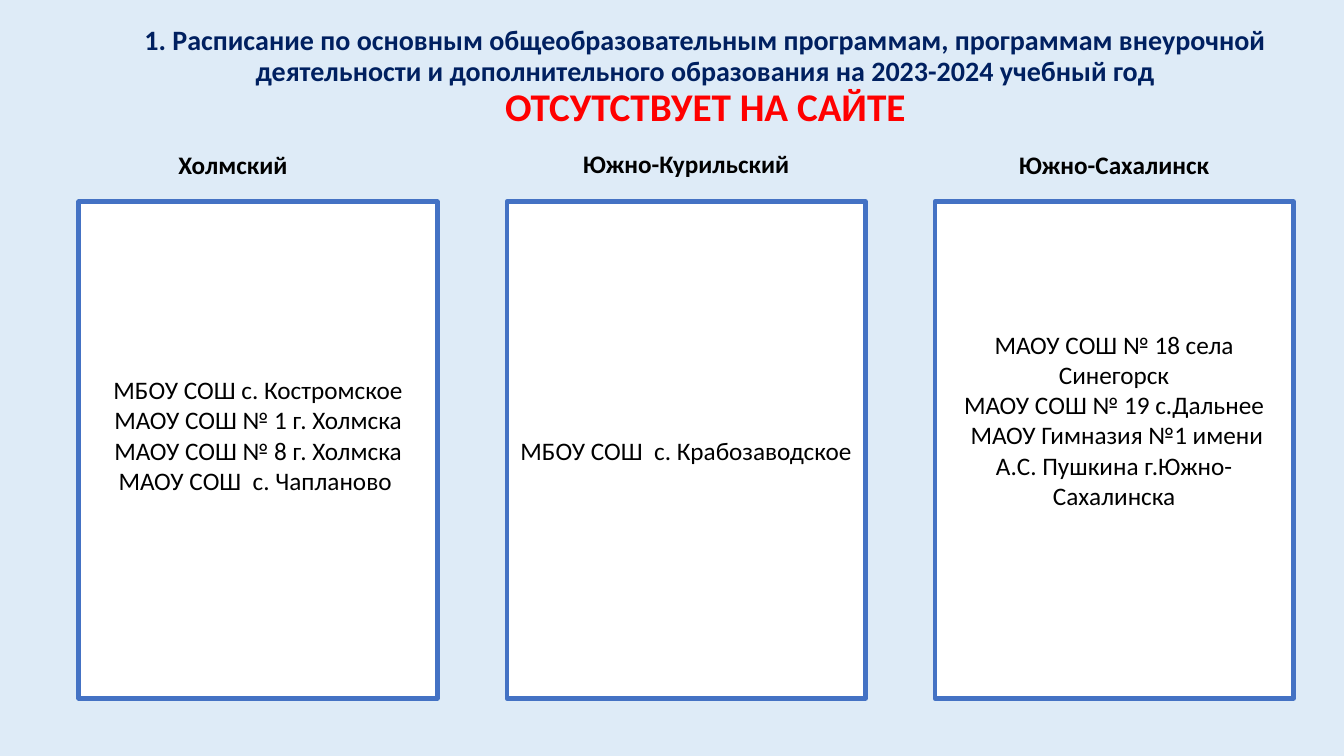
from pptx import Presentation
from pptx.dml.color import RGBColor
from pptx.enum.shapes import MSO_SHAPE as SHAPE
from pptx.enum.text import MSO_ANCHOR as ANCHOR, MSO_AUTO_SIZE as AUTO, PP_ALIGN as ALIGN
from pptx.util import Inches, Pt

LEFT, PITCH, CARD_W = 0.78, 4.245, 3.56
CARD_TOP, CARD_H = 2, 4.93
LINE_H = 0.3
BODY = {"name": "Calibri", "size": Pt(18), "bold": False}
HEADING = {**BODY, "bold": True}
TITLE = [
    ("1. Расписание по основным общеобразовательным программам, программам внеурочной "
     "деятельности и дополнительного образования на 2023-2024 учебный год",
     {**HEADING, "size": Pt(20)}, "002060"),
    ("ОТСУТСТВУЕТ НА САЙТЕ", {**HEADING, "size": Pt(28)}, "FF0000"),
]
# Each district: heading, heading width, heading shift, heading top, schools, free lines below
DISTRICTS = [
    ("Холмский", 1.29, -0.25, 1.43,
     ["МБОУ СОШ с. Костромское", "МАОУ СОШ № 1 г. Холмска",
      "МАОУ СОШ № 8 г. Холмска", "МАОУ СОШ  с. Чапланово "], 1),
    ("Южно-Курильский", 2.27, 0, 1.42, ["МБОУ СОШ  с. Крабозаводское"], 0),
    ("Южно-Сахалинск", 2.11, 0, 1.43,
     ["МАОУ СОШ № 18 села Синегорск", "МАОУ СОШ № 19 с.Дальнее",
      " МАОУ Гимназия №1 имени А.С. Пушкина г.Южно-Сахалинска"], 2),
]


def paint(color_format, value):
    """Set a colour from a hex string."""
    color_format.rgb = RGBColor.from_string(value)


def write(tf, lines, spacing=None):
    """Write centred paragraphs from (text, font format, colour) tuples."""
    for i, (text, fmt, color) in enumerate(lines):
        p = tf.add_paragraph() if i else tf.paragraphs[0]
        p.alignment, p.line_spacing = ALIGN.CENTER, spacing
        r = p.add_run()
        r.text = text
        for key, value in fmt.items():
            setattr(r.font, key, value)
        paint(r.font.color, color)


def add_title(s):
    """Move and fill the title placeholder."""
    sp = s.shapes.title
    box = {"left": 0.92, "top": 0.1, "width": 12.15, "height": 1.35}
    for key, value in box.items():
        setattr(sp, key, Inches(value))
    tf = sp.text_frame
    tf.word_wrap, tf.auto_size, tf.vertical_anchor = True, AUTO.NONE, ANCHOR.MIDDLE
    write(tf, TITLE, 0.9)


def add_heading(s, text, center, top, width):
    """Add a district name centred on its column."""
    sp = s.shapes.add_textbox(Inches(center - width / 2), Inches(top), Inches(width), Inches(0.4))
    tf = sp.text_frame
    tf.word_wrap, tf.auto_size = False, AUTO.SHAPE_TO_FIT_TEXT
    write(tf, [(text, HEADING, "000000")])


def add_card(s, left, schools, free_lines):
    """Add a framed list of schools, raised by the free lines below it."""
    sp = s.shapes.add_shape(SHAPE.RECTANGLE, Inches(left), Inches(CARD_TOP),
                            Inches(CARD_W), Inches(CARD_H))
    sp.shadow.inherit = False
    sp.fill.solid()
    paint(sp.fill.fore_color, "FFFFFF")
    paint(sp.line.color, "4472C4")
    sp.line.width = Pt(3)
    tf = sp.text_frame
    tf.word_wrap, tf.vertical_anchor = True, ANCHOR.MIDDLE
    tf.margin_bottom = Inches(0.05 + free_lines * LINE_H)
    write(tf, [(school, BODY, "000000") for school in schools])


def main():
    """Build the slide and save it."""
    prs = Presentation()
    prs.slide_width, prs.slide_height = Inches(13.33), Inches(7.5)
    s = prs.slides.add_slide(prs.slide_layouts[5])
    s.background.fill.solid()
    paint(s.background.fill.fore_color, "DEEBF7")
    add_title(s)
    for col, (name, width, shift, top, schools, free_lines) in enumerate(DISTRICTS):
        left = LEFT + col * PITCH
        add_card(s, left, schools, free_lines)
        add_heading(s, name, left + CARD_W / 2 + shift, top, width)
    prs.save("out.pptx")


if __name__ == "__main__":
    main()
